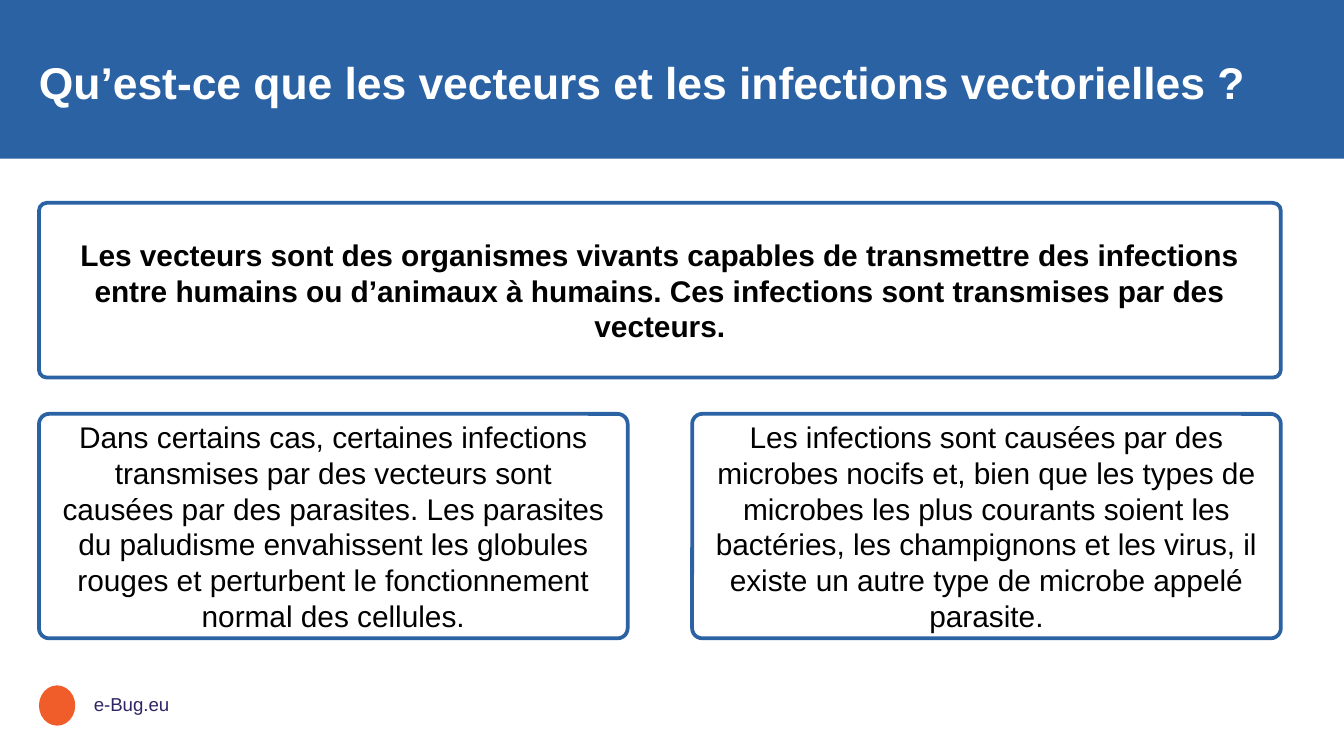
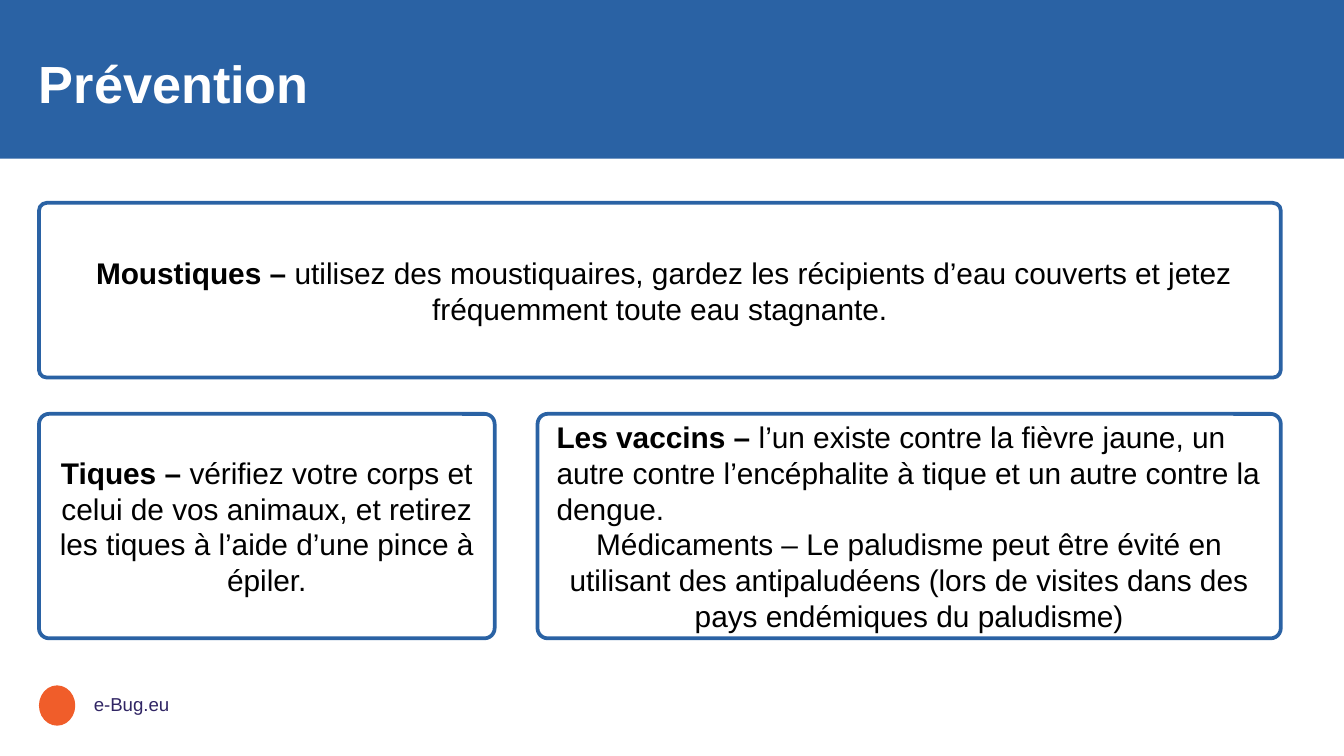
from dataclasses import dataclass

from pptx import Presentation
from pptx.dml.color import RGBColor
from pptx.enum.shapes import MSO_SHAPE
from pptx.enum.text import MSO_ANCHOR, MSO_AUTO_SIZE, PP_ALIGN
from pptx.presentation import Presentation as Deck
from pptx.shapes.autoshape import Shape
from pptx.slide import Slide, SlideLayout
from pptx.util import Inches, Pt

RECTANGLE = MSO_SHAPE.RECTANGLE
ROUNDED = MSO_SHAPE.ROUNDED_RECTANGLE
OVAL = MSO_SHAPE.OVAL
LEFT = PP_ALIGN.LEFT
CENTER = PP_ALIGN.CENTER
MIDDLE = MSO_ANCHOR.MIDDLE
NO_AUTOFIT = MSO_AUTO_SIZE.NONE

TITLE_ONLY = 5
MARGIN = 0.29
CONTENT_WIDTH = 9.24
TOP_ROW = (1.51, 1.3)
BOTTOM_ROW = (3.08, 1.67)


@dataclass(frozen=True)
class Theme:
    font: str = "Arial"
    blue: RGBColor = RGBColor(0x2A, 0x62, 0xA4)
    orange: RGBColor = RGBColor(0xF0, 0x5D, 0x2A)
    indigo: RGBColor = RGBColor(0x30, 0x25, 0x64)
    white: RGBColor = RGBColor(0xFF, 0xFF, 0xFF)
    black: RGBColor = RGBColor(0x00, 0x00, 0x00)
    body_size: Pt = Pt(16)
    footer_size: Pt = Pt(10)
    border: Pt = Pt(2)


THEME = Theme()


@dataclass(frozen=True)
class Text:
    body: str = ""
    lead: str = ""
    align: PP_ALIGN = CENTER


@dataclass(frozen=True)
class Card:
    texts: tuple[Text, ...]
    width: float


@dataclass(frozen=True)
class Page:
    title: str
    title_size: float
    title_spacing: float
    top: Card
    bottom_left: Card
    bottom_right: Card


PAGES = (
    Page(
        "Qu’est-ce que les vecteurs et les infections vectorielles ?", 23.8, 0.8,
        Card((Text(lead="Les vecteurs sont des organismes vivants capables de transmettre "
                        "des infections entre humains ou d’animaux à humains. Ces infections "
                        "sont transmises par des vecteurs."),), CONTENT_WIDTH),
        Card((Text("Dans certains cas, certaines infections transmises par des vecteurs sont "
                   "causées par des parasites. Les parasites du paludisme envahissent les "
                   "globules rouges et perturbent le fonctionnement normal des cellules."),),
             4.38),
        Card((Text("Les infections sont causées par des microbes nocifs et, bien que les types "
                   "de microbes les plus courants soient les bactéries, les champignons et les "
                   "virus, il existe un autre type de microbe appelé parasite."),), 4.38),
    ),
    Page(
        "Prévention", 28, 0.9,
        Card((Text("utilisez des moustiquaires, gardez les récipients d’eau couverts et jetez "
                   "fréquemment toute eau stagnante.", " Moustiques – "),), CONTENT_WIDTH),
        Card((Text("vérifiez votre corps et celui de vos animaux, et retirez les tiques à "
                   "l’aide d’une pince à épiler.", "Tiques – "),), 3.39),
        Card((Text("l’un existe contre la fièvre jaune, un autre contre l’encéphalite à tique "
                   "et un autre contre la dengue.", "Les vaccins – ", LEFT),
              Text("Médicaments – Le paludisme peut être évité en utilisant des "
                   "antipaludéens (lors de visites dans des pays endémiques du paludisme)")),
             5.53),
    ),
)


def add_plain_shape(page: Slide, kind: MSO_SHAPE, left: float, top: float,
                    width: float, height: float, color: RGBColor) -> Shape:
    shape = page.shapes.add_shape(
        kind, Inches(left), Inches(top), Inches(width), Inches(height))
    shape.shadow.inherit = False
    shape.fill.solid()
    shape.fill.fore_color.rgb = color
    shape.line.fill.background()
    return shape


def move_to_layout(shapes: list[Shape], layout: SlideLayout) -> None:
    """Put shapes behind the layout's placeholders, with identifiers unique there."""
    tree = layout.shapes.element
    next_id = max(shape.shape_id for shape in layout.shapes) + 1
    for offset, shape in enumerate(shapes):
        shape.element.nvSpPr.cNvPr.set("id", str(next_id + offset))
        tree.insert(2 + offset, shape.element)


def style_layout(layout: SlideLayout, page: Slide) -> None:
    """Draw the band and footer on the page, then share them through its layout."""
    band = add_plain_shape(page, RECTANGLE, 0, 0, 10, 1.18, THEME.blue)
    emblem = add_plain_shape(page, OVAL, MARGIN, 5.1, 0.27, 0.3, THEME.orange)
    footer = page.shapes.add_textbox(Inches(0.6), Inches(5.11), Inches(0.76), Inches(0.3))
    paragraph = footer.text_frame.paragraphs[0]
    paragraph.text = "e-Bug.eu"
    paragraph.font.name = THEME.font
    paragraph.font.size = THEME.footer_size
    paragraph.font.color.rgb = THEME.indigo
    move_to_layout([band, footer, emblem], layout)

    title = layout.placeholders[0]
    title.left, title.top = Inches(MARGIN), Inches(0.29)
    title.width, title.height = Inches(9.37), Inches(0.71)


def fill_title(page: Slide, content: Page) -> None:
    frame = page.shapes.title.text_frame
    frame.auto_size = NO_AUTOFIT
    frame.vertical_anchor = MIDDLE
    frame.margin_left = 0
    paragraph = frame.paragraphs[0]
    paragraph.text = content.title
    paragraph.alignment = LEFT
    paragraph.line_spacing = content.title_spacing
    paragraph.font.name = THEME.font
    paragraph.font.size = Pt(content.title_size)
    paragraph.font.bold = True
    paragraph.font.color.rgb = THEME.white


def add_card(page: Slide, card: Card, left: float, row: tuple[float, float]) -> None:
    top, height = row
    box = add_plain_shape(page, ROUNDED, left, top, card.width, height, THEME.white)
    box.adjustments[0] = 0.045
    box.line.color.rgb = THEME.blue
    box.line.width = THEME.border
    frame = box.text_frame
    frame.word_wrap = True
    frame.vertical_anchor = MIDDLE
    frame.margin_left = frame.margin_right = Inches(0.12)
    frame.margin_top = frame.margin_bottom = Inches(0.08)
    for index, text in enumerate(card.texts):
        paragraph = frame.add_paragraph() if index else frame.paragraphs[0]
        paragraph.alignment = text.align
        paragraph.font.name = THEME.font
        paragraph.font.size = THEME.body_size
        paragraph.font.color.rgb = THEME.black
        for words, bold in ((text.lead, True), (text.body, False)):
            if words:
                span = paragraph.add_run()
                span.text = words
                span.font.bold = bold


def add_page(deck: Deck, layout: SlideLayout, content: Page) -> Slide:
    page = deck.slides.add_slide(layout)
    fill_title(page, content)
    right_edge = MARGIN + CONTENT_WIDTH
    add_card(page, content.top, MARGIN, TOP_ROW)
    add_card(page, content.bottom_left, MARGIN, BOTTOM_ROW)
    add_card(page, content.bottom_right, right_edge - content.bottom_right.width, BOTTOM_ROW)
    return page


def main() -> None:
    deck = Presentation()
    deck.slide_width = Inches(10)
    deck.slide_height = deck.slide_width * 9 // 16
    layout = deck.slide_layouts[TITLE_ONLY]
    pages = [add_page(deck, layout, content) for content in PAGES]
    style_layout(layout, pages[0])
    deck.save("out.pptx")


if __name__ == "__main__":
    main()
